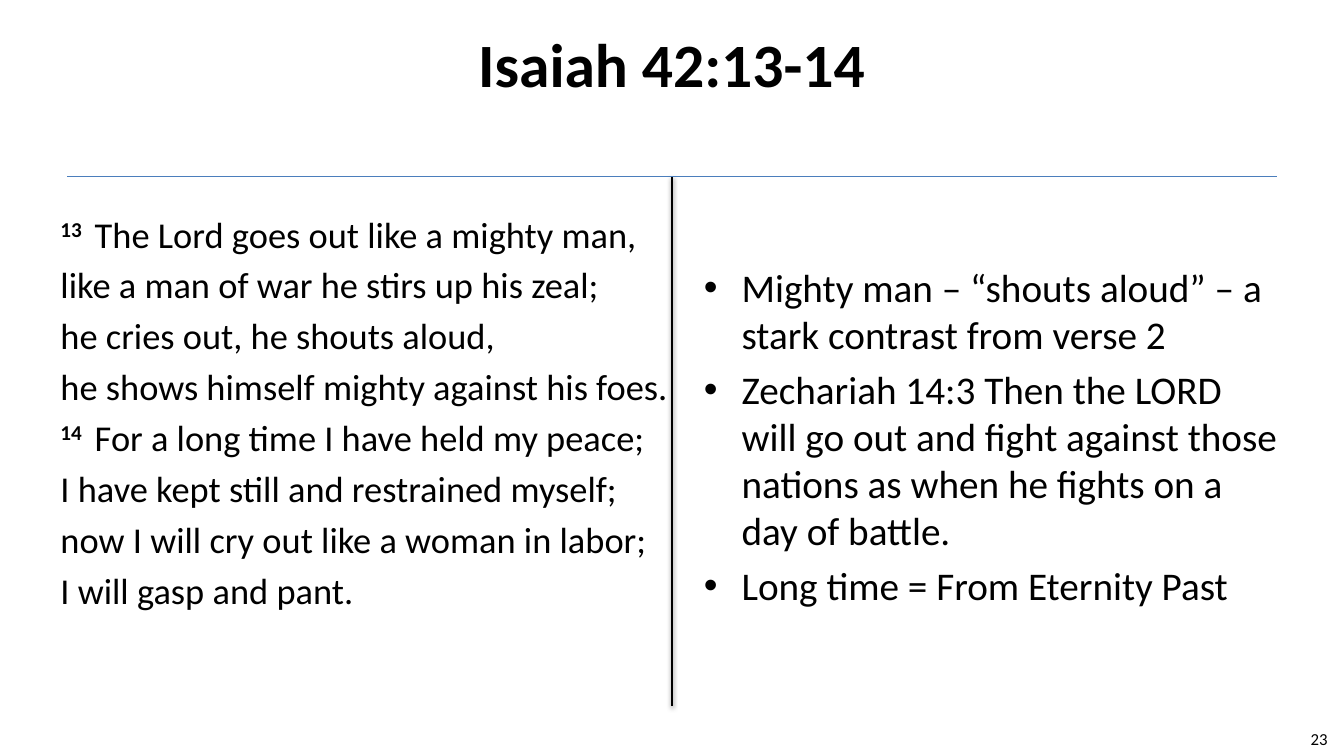
from dataclasses import dataclass
from lxml import etree
from pptx import Presentation
from pptx import util as u
from pptx.dml.color import RGBColor
from pptx.enum import shapes, text
from pptx.oxml import ns


@dataclass(frozen=True)
class Theme:
    face: str = "Calibri"
    ink: RGBColor = RGBColor(0, 0, 0)
    blue: RGBColor = RGBColor(0x4B, 0x7E, 0xBC)
    head: int = 44
    note: int = 28
    verse: int = 26
    foot: int = 12


theme = Theme()


def style(para, size, bold=False):
    font = para.font
    font.name, font.size, font.bold = theme.face, u.Pt(size), bold
    font.color.rgb = theme.ink


def place(shape, left, top, width, height, anchor):
    shape.left, shape.top = u.Pt(left), u.Pt(top)
    shape.width, shape.height = u.Pt(width), u.Pt(height)
    frame = shape.text_frame
    frame.word_wrap = True
    frame.auto_size = text.MSO_AUTO_SIZE.NONE
    frame.vertical_anchor = anchor
    return frame


deck = Presentation()
deck.slide_width, deck.slide_height = u.Pt(960), u.Pt(540)
slide = deck.slides.add_slide(deck.slide_layouts[3])
title, left, right = slide.placeholders
top, middle = text.MSO_ANCHOR.TOP, text.MSO_ANCHOR.MIDDLE

frame = place(title, 48, 0, 864, 90, middle)
frame.text = "Isaiah 42:13-14"
frame.paragraphs[0].alignment = text.PP_ALIGN.CENTER
style(frame.paragraphs[0], theme.head, True)

notes = [
    "Mighty man – “shouts aloud” – a stark contrast from verse 2",
    "Zechariah 14:3 Then the LORD will go out and fight against those "
    "nations as when he fights on a day of battle.",
    "Long time = From Eternity Past",
]
frame = place(right, 495.5, 184.5, 424, 316.5, top)
frame.text = "\n".join(notes)
frame.paragraphs[0].space_before = u.Pt(0)
for para in frame.paragraphs:
    style(para, theme.note)

box = slide.shapes.add_textbox(0, 0, 0, 0)
frame = place(box, 883.5, 513.5, 72, 28.8, middle)
frame.text = "23"
frame.paragraphs[0].alignment = text.PP_ALIGN.RIGHT
style(frame.paragraphs[0], theme.foot)

rules = [
    (480, 126, 480, 504, theme.ink, 2, True),
    (48, 126, 912, 126, theme.blue, 0.75, False),
]
for x1, y1, x2, y2, color, width, shade in rules:
    ends = [u.Pt(n) for n in (x1, y1, x2, y2)]
    rule = slide.shapes.add_connector(shapes.MSO_CONNECTOR.STRAIGHT, *ends)
    rule.line.color.rgb, rule.line.width = color, u.Pt(width)
    effect = etree.SubElement(rule._element.spPr, ns.qn("a:effectLst"))
    if shade:
        glow = etree.SubElement(effect, ns.qn("a:outerShdw"), blurRad="40000",
                                dist="20000", dir="5400000", rotWithShape="0")
        tint = etree.SubElement(glow, ns.qn("a:srgbClr"), val=str(theme.ink))
        etree.SubElement(tint, ns.qn("a:alpha"), val="38000")

verses = [
    ("13 ", " The Lord goes out like a mighty man,"),
    ("", "like a man of war he stirs up his zeal;"),
    ("", "he cries out, he shouts aloud,"),
    ("", "he shows himself mighty against his foes."),
    ("14 ", " For a long time I have held my peace;"),
    ("", "I have kept still and restrained myself;"),
    ("", "now I will cry out like a woman in labor;"),
    ("", "I will gasp and pant."),
]
frame = place(left, 36, 147.6, 459.4, 356.4, top)
for i, (mark, line) in enumerate(verses):
    para = frame.add_paragraph() if i else frame.paragraphs[0]
    props = para._p.get_or_add_pPr()
    props.set("marL", "0")
    props.set("indent", "0")
    etree.SubElement(props, ns.qn("a:buNone"))
    style(para, theme.verse)
    if mark:
        run = para.add_run()
        run.text = mark
        run.font.bold = True
        run._r.get_or_add_rPr().set("baseline", "30000")
    para.add_run().text = line
frame.paragraphs[0].space_before = u.Pt(0)

deck.save("out.pptx")
